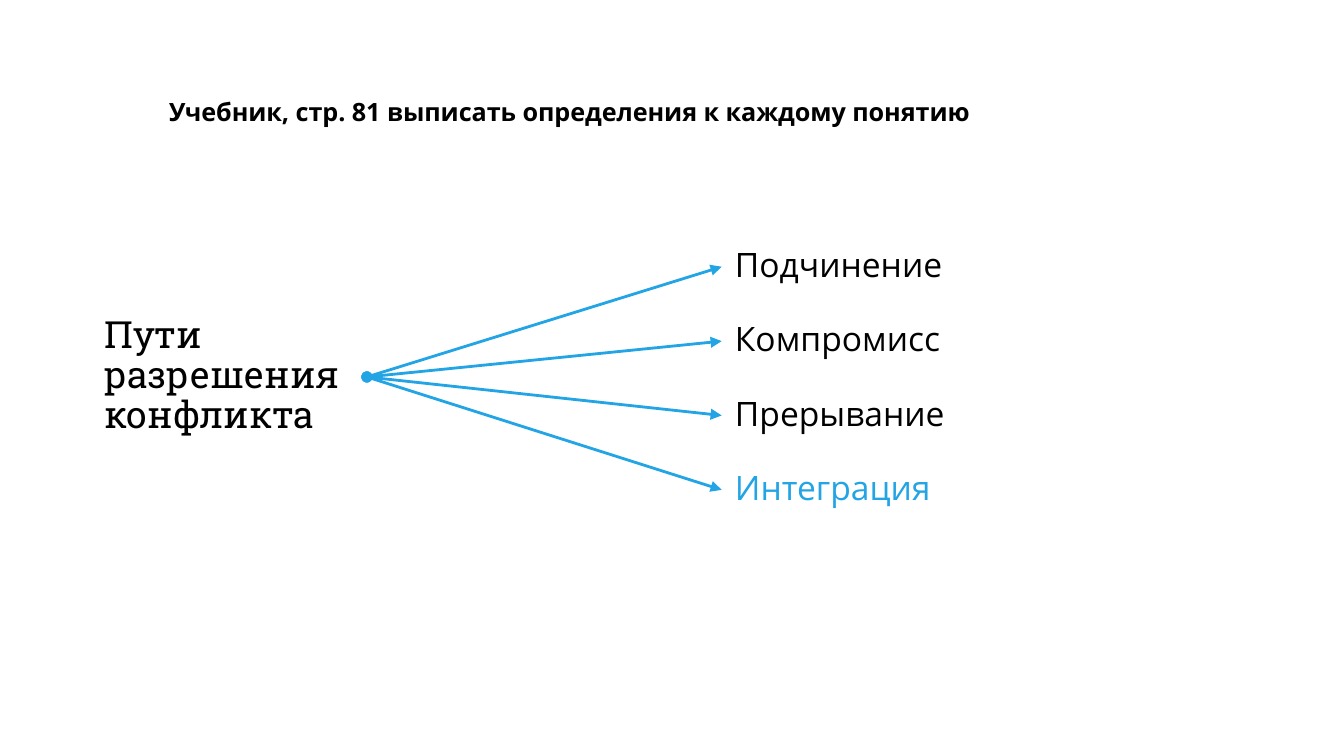
from dataclasses import dataclass

from lxml import etree
from pptx import Presentation
from pptx import util as u
from pptx.dml import color
from pptx.enum import shapes, text
from pptx.oxml import ns
from pptx.shapes.autoshape import Shape
from pptx.slide import Slide

BLACK = "000000"
BLUE = "22A4E5"
FIRST_TOP = 1.8
LAST_TOP = 3.46


@dataclass
class Label:
    words: str
    left: float
    top: float
    width: float
    height: float
    size: float
    font: str = "Open Sans"
    tint: str = BLACK
    bold: bool = False
    spacing: float = 0.9


@dataclass
class Way:
    name: str
    width: float
    tint: str = BLACK


WAYS = [
    Way("Подчинение", 2.59),
    Way("Компромисс", 3.75),
    Way("Прерывание", 3.95),
    Way("Интеграция", 2.1, BLUE),
]


def rgb(value: str) -> color.RGBColor:
    return color.RGBColor.from_string(value)


def add_label(page: Slide, label: Label) -> Shape:
    box = page.shapes.add_textbox(
        u.Inches(label.left), u.Inches(label.top),
        u.Inches(label.width), u.Inches(label.height))
    frame = box.text_frame
    frame.text = label.words
    frame.word_wrap = True
    frame.auto_size = text.MSO_AUTO_SIZE.SHAPE_TO_FIT_TEXT
    para = frame.paragraphs[0]
    para.line_spacing = label.spacing
    span = para.runs[0]
    span.font.name = label.font
    span.font.size = u.Pt(label.size)
    span.font.bold = label.bold
    span.font.color.rgb = rgb(label.tint)
    return box


def add_arrow(page: Slide, way: Shape, topic: Shape) -> None:
    arrow = page.shapes.add_connector(shapes.MSO_CONNECTOR.STRAIGHT, 0, 0, 0, 0)
    arrow.begin_connect(way, 1)
    arrow.end_connect(topic, 3)
    arrow.line.color.rgb = rgb(BLUE)
    arrow.line.width = u.Pt(1.5)
    outline = arrow.line._get_or_add_ln()
    etree.SubElement(outline, ns.qn("a:headEnd"), type="triangle")
    etree.SubElement(outline, ns.qn("a:tailEnd"), type="oval")
    etree.SubElement(arrow._element.spPr, ns.qn("a:effectLst"))


def main() -> None:
    deck = Presentation()
    deck.slide_width = u.Inches(10)
    deck.slide_height = u.Inches(10 * 9 / 16)
    page = deck.slides.add_slide(deck.slide_layouts[6])

    topic = add_label(page, Label("Пути разрешения конфликта", 0.68, 2.3, 2.05, 1.01,
                                  20, font="Roboto Slab"))
    step = (LAST_TOP - FIRST_TOP) / (len(WAYS) - 1)
    boxes = [
        add_label(page, Label(way.name, 5.37, FIRST_TOP + step * row, way.width, 0.37,
                              18, tint=way.tint))
        for row, way in enumerate(WAYS)
    ]
    for box in boxes:
        add_arrow(page, box, topic)
    add_label(page, Label("Учебник, стр. 81 выписать определения к каждому понятию",
                          1.16, 0.67, 8.16, 0.33, 13.5, bold=True, spacing=1.0))
    deck.save("out.pptx")


if __name__ == "__main__":
    main()
